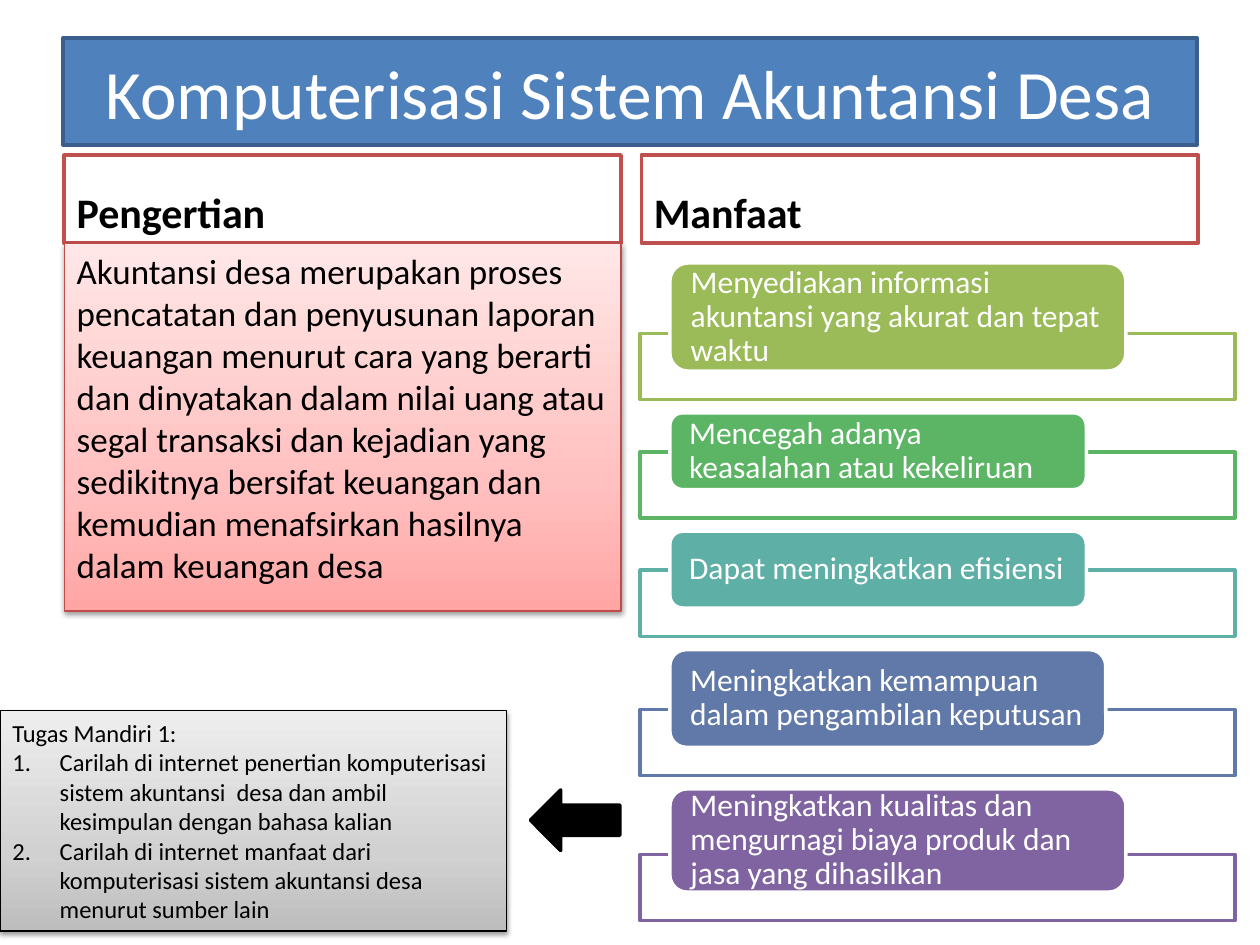
from pptx import Presentation
from pptx.dml.color import RGBColor
from pptx.enum.shapes import MSO_SHAPE as Shape
from pptx.enum.text import MSO_ANCHOR as Anchor, PP_ALIGN as Align
from pptx.oxml import parse_xml
from pptx.oxml.ns import nsdecls, qn
from pptx.util import Pt

DEFINITION = (
    "Akuntansi desa merupakan proses pencatatan dan penyusunan laporan keuangan "
    "menurut cara yang berarti dan dinyatakan dalam nilai uang atau segal transaksi "
    "dan kejadian yang sedikitnya bersifat keuangan dan kemudian menafsirkan "
    "hasilnya dalam keuangan desa"
)
TASK_TITLE = "Tugas Mandiri 1:"
TASKS = [
    "Carilah di internet penertian komputerisasi sistem akuntansi  desa dan ambil "
    "kesimpulan dengan bahasa kalian",
    "Carilah di internet manfaat dari komputerisasi sistem akuntansi desa menurut "
    "sumber lain",
]
BENEFITS = [
    ("Menyediakan informasi akuntansi yang akurat dan tepat waktu", "9BBB59", 260.6, 61.8),
    ("Mencegah adanya keasalahan atau kekeliruan", "5CB565", 238, 43.9),
    ("Dapat meningkatkan efisiensi", "5EAFA6", 238, 43.9),
    ("Meningkatkan kemampuan dalam pengambilan keputusan", "6179A8", 249.1, 55.8),
    ("Meningkatkan kualitas dan mengurnagi biaya produk dan jasa yang dihasilkan",
     "8064A2", 260.6, 59),
]
RED_GRADIENT = [(0, "FFA6A5"), (35, "FFC0BF"), (100, "FFE7E7")]
GREY_GRADIENT = [(0, "BDBDBD"), (35, "D1D1D1"), (100, "EEEEEE")]


def color(value):
    """Turn a hex string into a colour."""
    return RGBColor.from_string(value)


def add_box(page, box, fill, line, weight=2, kind=Shape.RECTANGLE):
    """Add a shape with a flat fill, or no fill when it is None, and an outline."""
    shape = page.shapes.add_shape(kind, *(Pt(length) for length in box))
    shape.shadow.inherit = False
    if fill:
        shape.fill.solid()
        shape.fill.fore_color.rgb = color(fill)
    shape.line.color.rgb = color(line)
    shape.line.width = Pt(weight)
    return shape


def add_gradient_box(page, box, stops, line):
    """Add a rectangle with an upward gradient and a soft shadow below."""
    shape = add_box(page, box, None, line, 0.75)
    marks = "".join(
        f'<a:gs pos="{place * 1000}"><a:srgbClr val="{value}"/></a:gs>'
        for place, value in stops
    )
    properties = shape._element.spPr
    properties.find(qn("a:prstGeom")).addnext(parse_xml(
        f'<a:gradFill {nsdecls("a")} rotWithShape="1"><a:gsLst>{marks}</a:gsLst>'
        '<a:lin ang="16200000" scaled="1"/></a:gradFill>'
    ))
    properties.find(qn("a:effectLst")).append(parse_xml(
        f'<a:outerShdw {nsdecls("a")} blurRad="{Pt(3.1)}" dist="{Pt(1.6)}" '
        'dir="5400000" rotWithShape="0"><a:srgbClr val="000000">'
        '<a:alpha val="38000"/></a:srgbClr></a:outerShdw>'
    ))
    return shape


def write(shape, lines, size, ink="000000", bold=False, align=Align.LEFT,
          anchor=Anchor.MIDDLE, before=0):
    """Fill a shape with paragraphs of one style and return its text frame."""
    frame = shape.text_frame
    frame.word_wrap = True
    frame.vertical_anchor = anchor
    frame.text = "\n".join(lines)
    for para in frame.paragraphs:
        para.alignment = align
        para.space_before = Pt(before)
        for span in para.runs:
            span.font.name = "Calibri"
            span.font.size = Pt(size)
            span.font.bold = bold
            span.font.color.rgb = color(ink)
    return frame


def add_title(page, box):
    """Add the blue title bar."""
    bar = add_box(page, box, "4F81BD", "3A5F8C")
    write(bar, ["Komputerisasi Sistem Akuntansi Desa"], 39.6, "FFFFFF", align=Align.CENTER)


def add_heading(page, box, text):
    """Add a red-framed column heading."""
    frame = add_box(page, box, "FFFFFF", "C0504D")
    write(frame, [text], 24, bold=True, anchor=Anchor.BOTTOM, before=4.8)


def add_definition(page, box):
    """Add the definition on a red gradient."""
    panel = add_gradient_box(page, box, RED_GRADIENT, "BF4C48")
    write(panel, [DEFINITION], 20, anchor=Anchor.TOP, before=4)


def add_benefits(page, box):
    """Stack the benefits, each a label overlapping the top of its frame."""
    left, top, width, height = box
    frame_height, overlap = 37.8, 21.6
    used = sum(label_height - overlap + frame_height for *_, label_height in BENEFITS)
    gap = (height - used) / (len(BENEFITS) - 1)
    for text, tint, label_width, label_height in BENEFITS:
        frame_top = top + label_height - overlap
        add_box(page, (left, frame_top, width, frame_height), "FFFFFF", tint)
        label = add_box(page, (left + width * 0.05, top, label_width, label_height),
                        tint, "FFFFFF", kind=Shape.ROUNDED_RECTANGLE)
        frame = write(label, [text], 18, "FFFFFF")
        frame.margin_left = frame.margin_right = Pt(8.9)
        frame.margin_top = frame.margin_bottom = 0
        frame.paragraphs[0].line_spacing = 0.9
        top = frame_top + frame_height + gap


def add_tasks(page, box):
    """Add the numbered tasks on a grey gradient."""
    panel = add_gradient_box(page, box, GREY_GRADIENT, "000000")
    frame = write(panel, [TASK_TITLE, *TASKS], 14)
    for para in frame.paragraphs[1:]:
        properties = para._p.get_or_add_pPr()
        properties.set("marL", str(Pt(27)))
        properties.set("indent", str(Pt(-27)))
        properties.append(parse_xml(
            f'<a:buAutoNum {nsdecls("a")} type="arabicPeriod"/>'
        ))


def main():
    """Build the slide and save it."""
    deck = Presentation()
    deck.slide_width, deck.slide_height = Pt(720), Pt(540)
    page = deck.slides.add_slide(deck.slide_layouts[6])
    add_title(page, (36, 21.6, 648, 61.2))
    add_heading(page, (36.7, 88.6, 318.2, 50.4), "Pengertian")
    add_definition(page, (36.7, 139, 318.2, 210.2))
    add_heading(page, (366.5, 88.6, 318.2, 50.4), "Manfaat")
    add_benefits(page, (365.8, 150.3, 340, 375.7))
    add_tasks(page, (0, 406.1, 289.4, 126))
    add_box(page, (303.1, 451.4, 51.1, 34.6), "000000", "000000", kind=Shape.LEFT_ARROW)
    deck.save("out.pptx")


if __name__ == "__main__":
    main()
